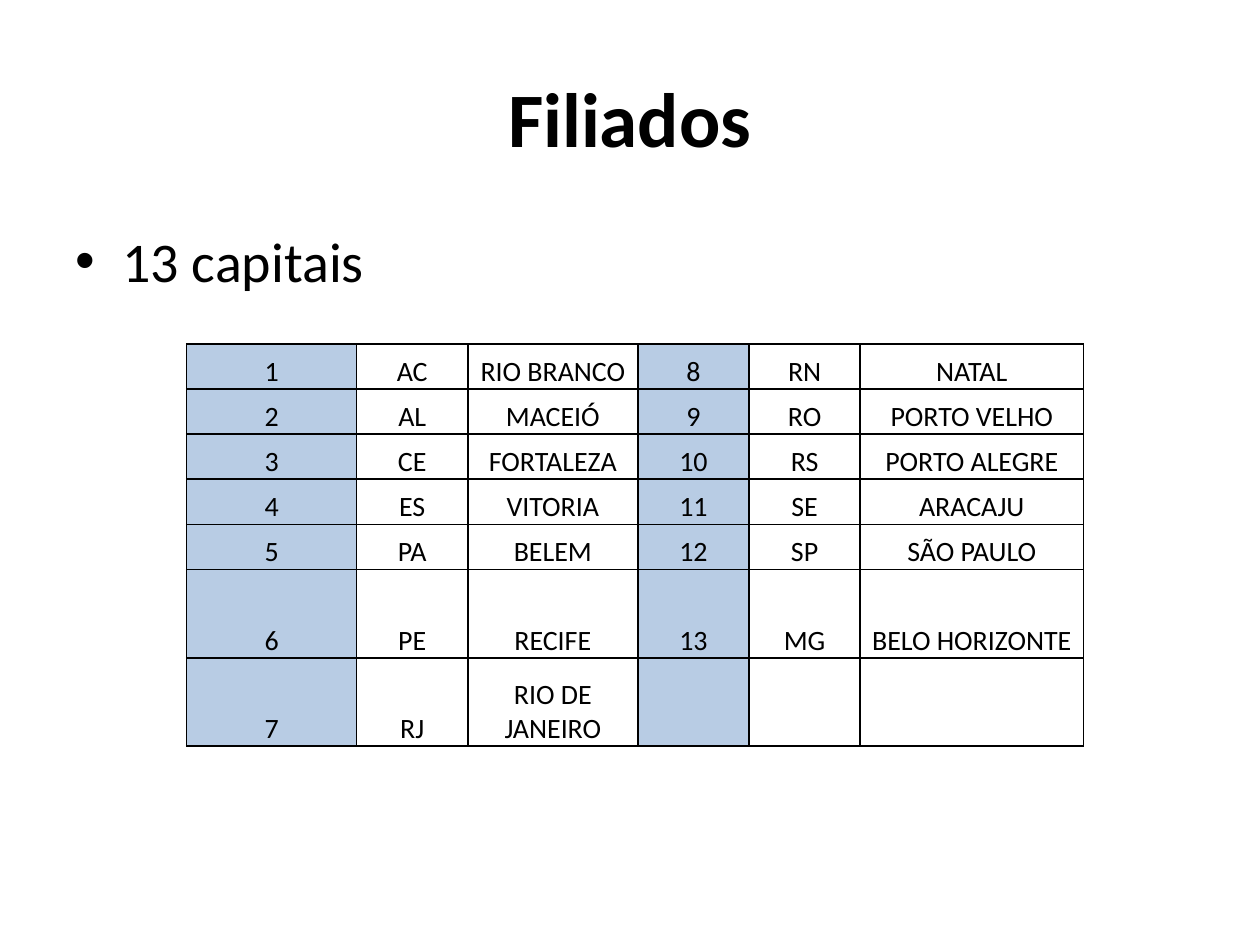
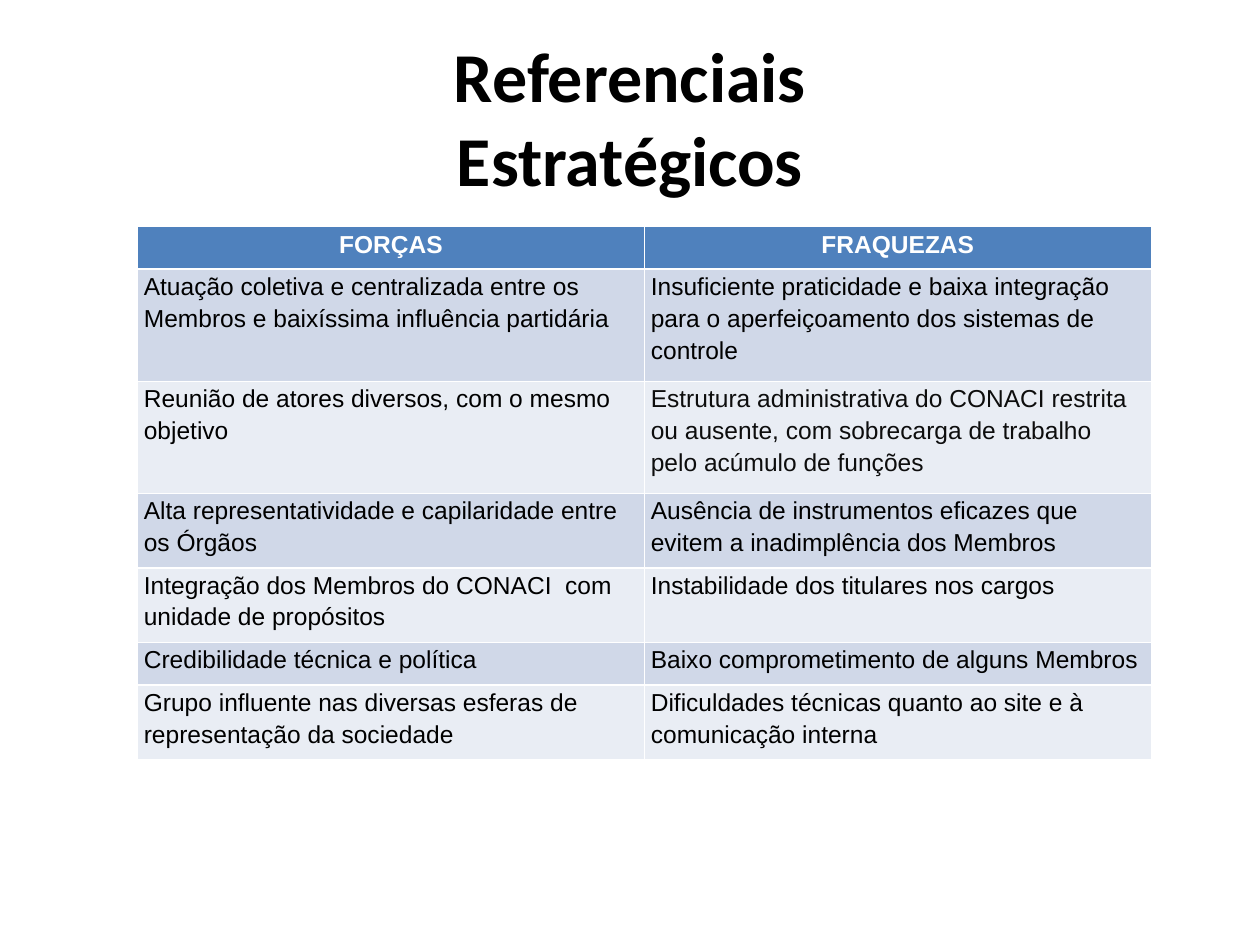
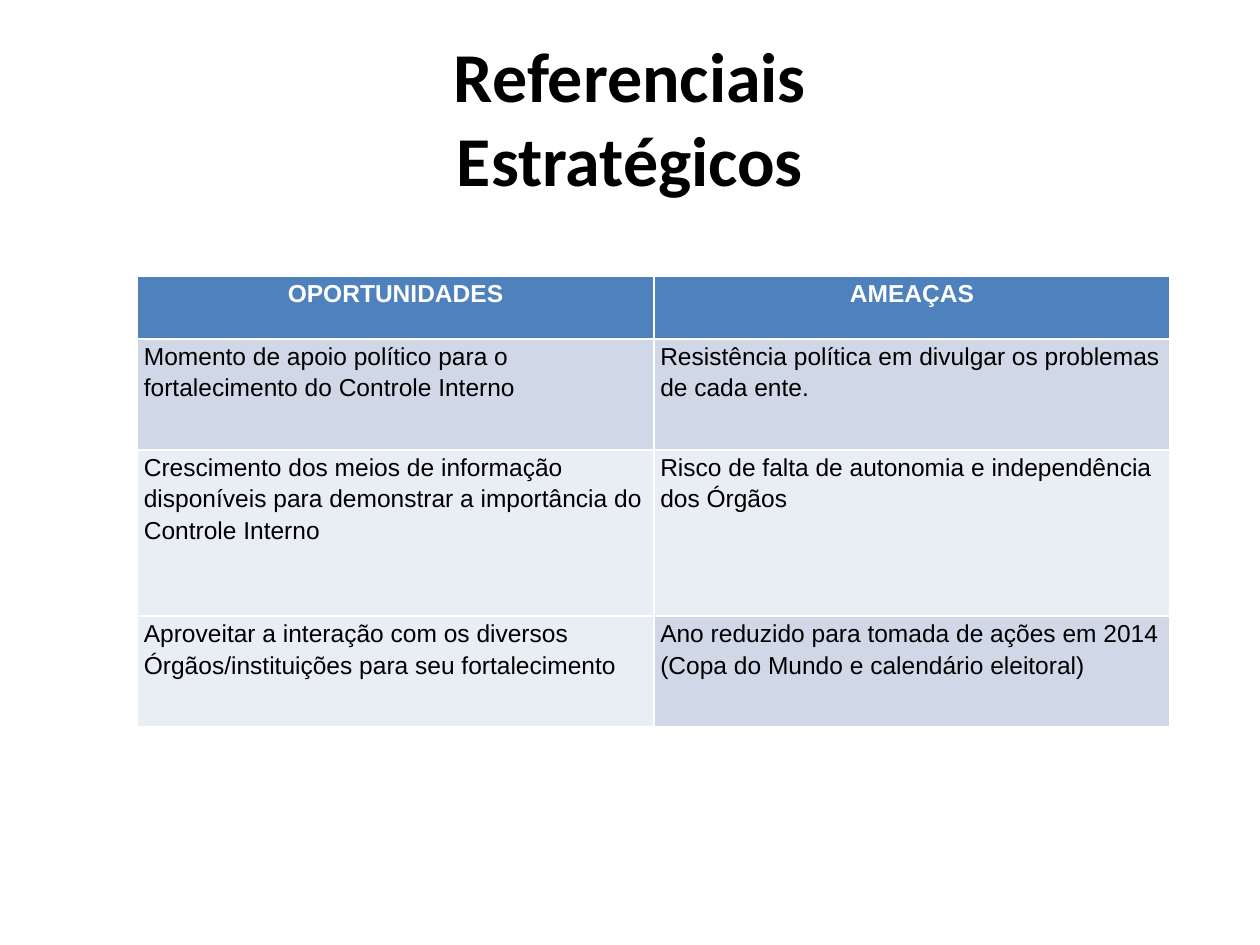
"""Build three slides: affiliated capitals and two strategic reference tables."""
from dataclasses import dataclass
from typing import Optional

from lxml.etree import SubElement
from pptx import Presentation
from pptx.dml.color import RGBColor
from pptx.enum.text import MSO_ANCHOR as Anchor, PP_ALIGN as Align
from pptx.oxml.ns import qn
from pptx.util import Cm, Pt


@dataclass(frozen=True)
class Theme:
    heading_font: str = "Calibri"
    table_font: str = "Arial"
    black: str = "000000"
    soft_black: str = "0D0D0D"
    white: str = "FFFFFF"
    number_fill: str = "B8CCE4"
    header_fill: str = "4F81BD"
    dark_band: str = "D0D8E8"
    light_band: str = "E9EDF4"
    title_size: int = 44
    long_title_size: int = 40
    bullet_size: int = 32
    capital_size: int = 16
    matrix_size: int = 14
    border: float = 1
    header_border: float = 1.5


THEME = Theme()


@dataclass(frozen=True)
class TextStyle:
    size: int
    font: str = THEME.heading_font
    color: str = THEME.black
    bold: bool = False


@dataclass(frozen=True)
class Cell:
    text: str
    style: TextStyle
    fill: Optional[str] = None
    align: Align = Align.LEFT


@dataclass(frozen=True)
class Grid:
    left: float
    top: float
    columns: list[float]
    rows: list[float]
    cells: list[list[Cell]]
    border_color: str
    anchor: Anchor
    margins: tuple[float, float, float, float]
    spacing: float = 1.0
    heavy_header: bool = False


CAPITALS = [
    ("AC", "RIO BRANCO"), ("AL", "MACEIÓ"), ("CE", "FORTALEZA"), ("ES", "VITORIA"),
    ("PA", "BELEM"), ("PE", "RECIFE"), ("RJ", "RIO DE JANEIRO"), ("RN", "NATAL"),
    ("RO", "PORTO VELHO"), ("RS", "PORTO ALEGRE"), ("SE", "ARACAJU"),
    ("SP", "SÃO PAULO"), ("MG", "BELO HORIZONTE"),
]
STRENGTHS = [
    ("FORÇAS", "FRAQUEZAS"),
    ("Atuação coletiva e centralizada entre os Membros e baixíssima influência partidária",
     "Insuficiente praticidade e baixa integração para o aperfeiçoamento dos sistemas de controle"),
    ("Reunião de atores diversos, com o mesmo objetivo",
     "Estrutura administrativa do CONACI restrita ou ausente, com sobrecarga de trabalho pelo "
     "acúmulo de funções"),
    ("Alta representatividade e capilaridade entre os Órgãos",
     "Ausência de instrumentos eficazes que evitem a inadimplência dos Membros"),
    ("Integração dos Membros do CONACI  com unidade de propósitos",
     "Instabilidade dos titulares nos cargos"),
    ("Credibilidade técnica e política", "Baixo comprometimento de alguns Membros"),
    ("Grupo influente nas diversas esferas de representação da sociedade",
     "Dificuldades técnicas quanto ao site e à comunicação interna"),
]
OPPORTUNITIES = [
    ("OPORTUNIDADES", "AMEAÇAS"),
    ("Momento de apoio político para o fortalecimento do Controle Interno",
     "Resistência política em divulgar os problemas de cada ente."),
    ("Crescimento dos meios de informação disponíveis para demonstrar a importância do "
     "Controle Interno",
     "Risco de falta de autonomia e independência dos Órgãos"),
    ("Aproveitar a interação com os diversos Órgãos/instituições para seu fortalecimento",
     "Ano reduzido para tomada de ações em 2014 (Copa do Mundo e calendário eleitoral)"),
]


def add_span(para, text: str, style: TextStyle) -> None:
    """Add one styled run to a paragraph."""
    span = para.add_run()
    span.text = text
    span.font.name = style.font
    span.font.size = Pt(style.size)
    span.font.bold = style.bold
    span.font.color.rgb = RGBColor.from_string(style.color)


def add_box(page, top: float, height: float):
    """Add a wrapping text box as wide as the content area."""
    frame = page.shapes.add_textbox(Cm(1.27), Cm(top), Cm(22.86), Cm(height)).text_frame
    frame.word_wrap = True
    return frame


def add_title(page, lines: list[str], size: int) -> None:
    """Add the centred bold title, one run per line."""
    frame = add_box(page, 0.76, 3.18)
    frame.vertical_anchor = Anchor.MIDDLE
    para = frame.paragraphs[0]
    para.alignment = Align.CENTER
    for index, line in enumerate(lines):
        if index:
            para.add_line_break()
        add_span(para, line, TextStyle(size, bold=True))


def add_bullet(page, text: str) -> None:
    """Add the body box with a single bulleted paragraph."""
    para = add_box(page, 4.45, 12.57).paragraphs[0]
    properties = para._p.get_or_add_pPr()
    properties.set("marL", str(Cm(0.95)))
    properties.set("indent", str(-Cm(0.95)))
    SubElement(properties, qn("a:buFont"), typeface="Arial")
    SubElement(properties, qn("a:buChar"), char="•")
    add_span(para, text, TextStyle(THEME.bullet_size))


def add_borders(cell, color: str, widths: dict[str, float]) -> None:
    """Draw the four cell borders in one colour."""
    properties = cell._tc.get_or_add_tcPr()
    for side, width in widths.items():
        line = SubElement(properties, qn(f"a:ln{side}"), w=str(Pt(width)))
        SubElement(SubElement(line, qn("a:solidFill")), qn("a:srgbClr"), val=color)


def fill_cell(target, cell: Cell, grid: Grid, row: int) -> None:
    """Format one table cell and write its text."""
    widths = dict.fromkeys("LRTB", THEME.border)
    if grid.heavy_header and row < 2:
        widths["T" if row else "B"] = THEME.header_border
    add_borders(target, grid.border_color, widths)
    if cell.fill:
        target.fill.solid()
        target.fill.fore_color.rgb = RGBColor.from_string(cell.fill)
    else:
        target.fill.background()
    target.vertical_anchor = grid.anchor
    (target.margin_left, target.margin_top,
     target.margin_right, target.margin_bottom) = map(Cm, grid.margins)
    para = target.text_frame.paragraphs[0]
    para.alignment = cell.align
    para.line_spacing = grid.spacing
    if cell.text:
        add_span(para, cell.text, cell.style)


def add_grid(page, grid: Grid) -> None:
    """Add a table from its grid description."""
    table = page.shapes.add_table(
        len(grid.rows), len(grid.columns), Cm(grid.left), Cm(grid.top),
        Cm(sum(grid.columns)), Cm(sum(grid.rows))).table
    table.first_row = table.horz_banding = False
    for column, width in zip(table.columns, grid.columns):
        column.width = Cm(width)
    for row, height in zip(table.rows, grid.rows):
        row.height = Cm(height)
    for row, cells in enumerate(grid.cells):
        for column, cell in enumerate(cells):
            fill_cell(table.cell(row, column), cell, grid, row)


def capital_cells(row_count: int) -> list[list[Cell]]:
    """Number the capitals and lay them out in two side-by-side groups."""
    style = TextStyle(THEME.capital_size)
    rows: list[list[Cell]] = [[] for _ in range(row_count)]
    for index in range(2 * row_count):
        known = index < len(CAPITALS)
        state, city = CAPITALS[index] if known else ("", "")
        number = str(index + 1) if known else ""
        rows[index % row_count] += [
            Cell(number, style, THEME.number_fill, Align.CENTER),
            Cell(state, style, align=Align.CENTER),
            Cell(city, style, align=Align.CENTER),
        ]
    return rows


def matrix_cells(content: list[tuple[str, str]]) -> list[list[Cell]]:
    """Turn text pairs into a header row and banded body rows."""
    header = TextStyle(THEME.matrix_size, THEME.table_font, THEME.white, True)
    body = TextStyle(THEME.matrix_size, THEME.table_font)
    bands = (THEME.light_band, THEME.dark_band)
    return [[Cell(text, body if row else header,
                  bands[row % 2] if row else THEME.header_fill,
                  Align.LEFT if row else Align.CENTER) for text in pair]
            for row, pair in enumerate(content)]


def add_capitals_page(page) -> None:
    """Build the slide that lists the affiliated capitals."""
    add_title(page, ["Filiados"], THEME.title_size)
    add_bullet(page, "13 capitais")
    rows = [0.91] * 5 + [1.78] * 2
    add_grid(page, Grid(3.76, 6.93, [3.43, 2.24, 3.43, 2.24, 2.24, 4.5], rows,
                        capital_cells(len(rows)), THEME.black, Anchor.BOTTOM,
                        (0.03, 0.03, 0.03, 0)))


def add_matrix_page(page, top: float, column: float, rows: list[float],
                    cells: list[list[Cell]]) -> None:
    """Build a strategic reference slide with a two-column table."""
    add_title(page, ["Referenciais", "Estratégicos"], THEME.long_title_size)
    add_grid(page, Grid(2.77, top, [column] * 2, rows, cells, THEME.white, Anchor.TOP,
                        (0.13, 0, 0.13, 0), 1.15, True))


def main() -> None:
    """Build and save the deck."""
    deck = Presentation()
    deck.slide_width, deck.slide_height = Cm(25.4), Cm(19.05)
    capitals, strengths, opportunities = (
        deck.slides.add_slide(deck.slide_layouts[6]) for _ in range(3))
    add_capitals_page(capitals)

    strength_cells = matrix_cells(STRENGTHS)
    structure = strength_cells[2][1]
    strength_cells[2][1] = Cell(
        structure.text,
        TextStyle(THEME.matrix_size, THEME.table_font, THEME.soft_black), structure.fill)
    add_matrix_page(strengths, 4.57, 10.22, [0.86, 2.26, 2.26, 1.5, 1.5, 0.86, 1.5],
                    strength_cells)

    opportunity_cells = matrix_cells(OPPORTUNITIES)
    interaction = opportunity_cells[3][0]
    opportunity_cells[3][0] = Cell(interaction.text, interaction.style, THEME.light_band)
    add_matrix_page(opportunities, 5.56, 10.41, [1.27, 2.24, 3.35, 2.24], opportunity_cells)
    deck.save("out.pptx")


if __name__ == "__main__":
    main()
